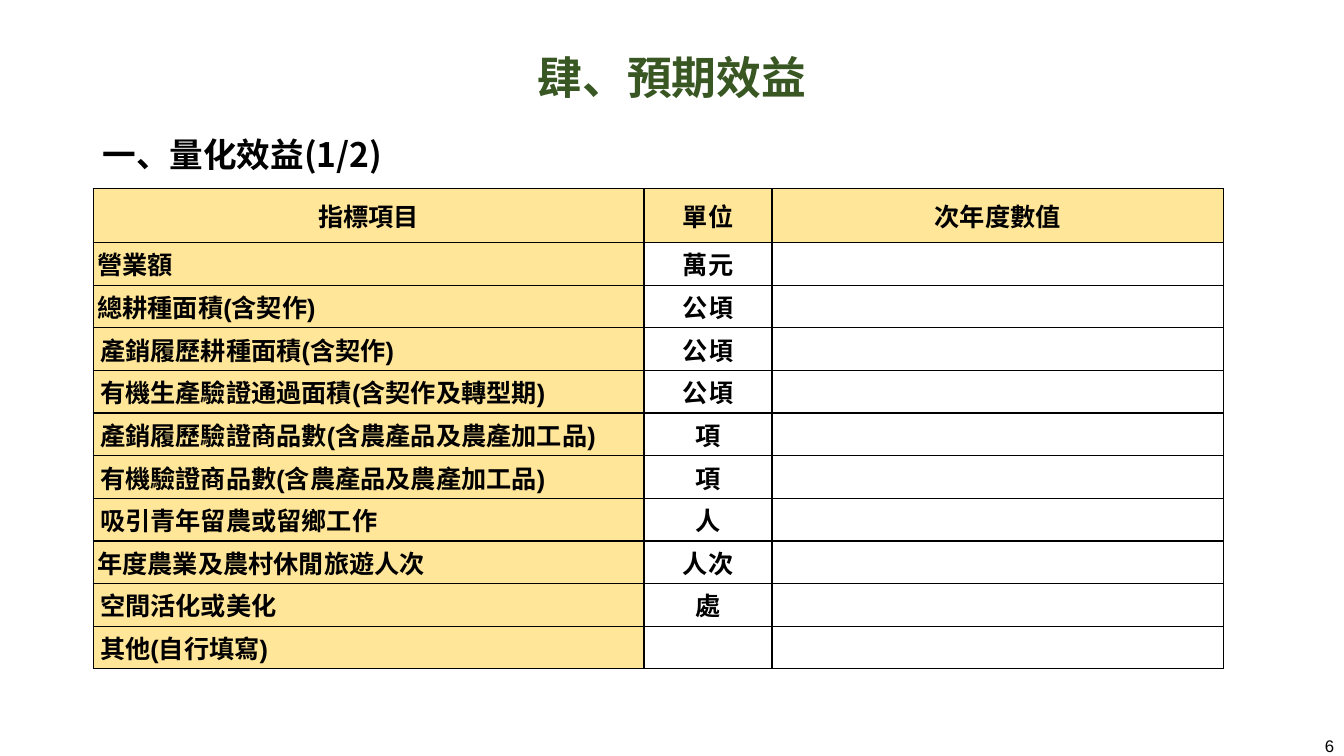
"""Build the quantitative benefits slide with its indicator table."""
from lxml import etree
from pptx import Presentation
from pptx import util as u
from pptx.dml import color
from pptx.enum import text
from pptx.oxml import ns

CJK = "Noto Sans CJK SC"
HEADERS = ("指標項目", "單位", "次年度數值")
INDICATORS = [
    ("營業額", "萬元", 3),
    ("總耕種面積(含契作)", "公頃", 3),
    ("產銷履歷耕種面積(含契作)", "公頃", 5),
    ("有機生產驗證通過面積(含契作及轉型期)", "公頃", 5),
    ("產銷履歷驗證商品數(含農產品及農產加工品)", "項", 5),
    ("有機驗證商品數(含農產品及農產加工品)", "項", 5),
    ("吸引青年留農或留鄉工作", "人", 5),
    ("年度農業及農村休閒旅遊人次", "人次", 3),
    ("空間活化或美化", "處", 5),
    ("其他(自行填寫)", "", 5),
]


def rgb(value):
    """Turn a hex string into a colour."""
    return color.RGBColor.from_string(value)


def write(tf, words, size=18, font="Arial", ink="000000", bold=True,
          align="LEFT", anchor="MIDDLE", insets=(0, 0, 0, 0)):
    """Put one formatted paragraph into a text frame and return it."""
    tf.word_wrap = True
    tf.vertical_anchor = text.MSO_ANCHOR[anchor]
    tf.margin_left, tf.margin_top, tf.margin_right, tf.margin_bottom = map(u.Pt, insets)
    p = tf.paragraphs[0]
    p.alignment = text.PP_ALIGN[align]
    p.font.size = u.Pt(size)
    if words:
        r = p.add_run()
        r.text = words
        r.font.size, r.font.name, r.font.bold = u.Pt(size), font, bold
        r.font.color.rgb = rgb(ink)
        etree.SubElement(r.font._element, ns.qn("a:ea"), typeface=CJK)
    return p


prs = Presentation()
prs.slide_width, prs.slide_height = u.Pt(960), u.Pt(540)
s = prs.slides.add_slide(prs.slide_layouts[5])

title = s.shapes.title
title.left, title.top, title.width, title.height = u.Pt(0), u.Pt(31.7), u.Pt(960), u.Pt(46)
title.text_frame.auto_size = text.MSO_AUTO_SIZE.NONE
write(title.text_frame, "肆、預期效益", size=32, font=CJK, ink="385723", align="CENTER")

sp = s.shapes.add_textbox(u.Pt(66.2), u.Pt(98.6), u.Pt(383), u.Pt(29.5))
p = write(sp.text_frame, "一、量化效益(1/2)", size=24, font=CJK, anchor="TOP",
          insets=(7.2, 3.6, 7.2, 3.6))
p.line_spacing, p.space_after = u.Pt(22), u.Pt(6)

sp = s.shapes.add_textbox(u.Pt(744), u.Pt(520.5), u.Pt(216), u.Pt(19.5))
write(sp.text_frame, "6", size=12, bold=False, align="RIGHT", anchor="BOTTOM",
      insets=(7.2, 0, 7.2, 0))

rows = [(*HEADERS, 3)] + [(item, unit, "", inset) for item, unit, inset in INDICATORS]
frame = s.shapes.add_table(len(rows), len(HEADERS), u.Pt(66.5), u.Pt(134.8), u.Pt(807.5), u.Pt(343))
table = frame.table
for column, width in zip(table.columns, (393.5, 91.5, 322.5)):
    column.width = u.Pt(width)

for i, (*words, inset) in enumerate(rows):
    table.rows[i].height = u.Pt(30.45 if i else 38.5)
    for j, word in enumerate(words):
        cell = table.cell(i, j)
        write(cell.text_frame, word, align="LEFT" if i and j == 0 else "CENTER")
        cell.vertical_anchor = text.MSO_ANCHOR.MIDDLE
        cell.margin_left = cell.margin_right = u.Pt(inset)
        cell.margin_top = cell.margin_bottom = u.Pt(0)
        tcPr = cell._tc.get_or_add_tcPr()
        for side in ("lnL", "lnR", "lnT", "lnB"):
            ln = etree.SubElement(tcPr, ns.qn(f"a:{side}"), w=str(u.Pt(1)))
            fill = etree.SubElement(ln, ns.qn("a:solidFill"))
            etree.SubElement(fill, ns.qn("a:srgbClr"), val="000000")
        cell.fill.solid()
        cell.fill.fore_color.rgb = rgb("FFE699" if i == 0 or j == 0 else "FFFFFF")

prs.save("out.pptx")
